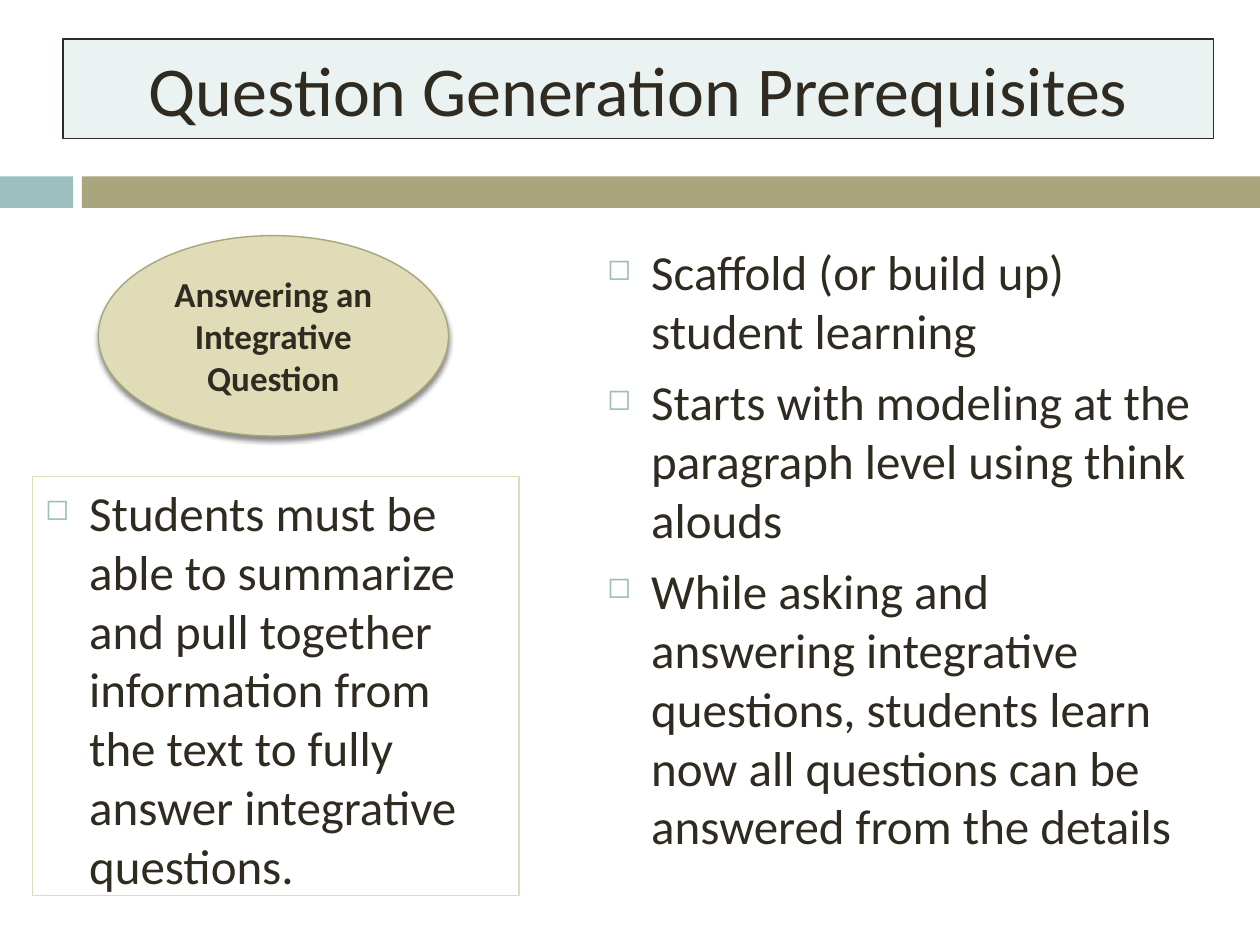
from lxml import etree
from pptx import Presentation
from pptx.dml.color import RGBColor
from pptx.enum.shapes import MSO_SHAPE
from pptx.enum.text import MSO_ANCHOR, MSO_AUTO_SIZE, PP_ALIGN
from pptx.oxml.ns import qn
from pptx.util import Inches, Pt

RECTANGLE, OVAL = MSO_SHAPE.RECTANGLE, MSO_SHAPE.OVAL
MIDDLE, CENTER = MSO_ANCHOR.MIDDLE, PP_ALIGN.CENTER
FIXED_SIZE = MSO_AUTO_SIZE.NONE

INK = RGBColor(0x2F, 0x2B, 0x20)
TEAL = RGBColor(0x9C, 0xBE, 0xBD)
PALE_TEAL = RGBColor(0xEB, 0xF2, 0xF2)
OLIVE = RGBColor(0xA9, 0xA5, 0x7C)
SAND = RGBColor(0xDF, 0xDC, 0xB7)
BLACK = RGBColor(0, 0, 0)

SUMMARY_POINTS = [
    "Students must be able to summarize and pull together information "
    "from the text to fully answer integrative questions.",
]
SCAFFOLD_POINTS = [
    "Scaffold (or build up) student learning",
    "Starts with modeling at the paragraph level using think alouds",
    "While asking and answering integrative questions, students learn now "
    "all questions can be answered from the details",
]


class SlideBuilder:
    font = "Calibri"

    def __init__(self, slide):
        self.slide = slide

    def place(self, shape, box):
        shape.left, shape.top, shape.width, shape.height = map(Inches, box)

    def outline(self, shape, color, width=0.75):
        shape.line.color.rgb = color
        shape.line.width = Pt(width)

    def format_runs(self, paragraph, size, bold=False):
        for run in paragraph.runs:
            run.font.name = self.font
            run.font.size = Pt(size)
            run.font.bold = bold
            run.font.color.rgb = INK

    def centered_text(self, shape, text, size, bold=False):
        frame = shape.text_frame
        frame.text = text
        frame.word_wrap = True
        frame.auto_size = FIXED_SIZE
        frame.vertical_anchor = MIDDLE
        frame.paragraphs[0].alignment = CENTER
        self.format_runs(frame.paragraphs[0], size, bold)

    def title(self, text, box):
        title = self.slide.shapes.title
        self.place(title, box)
        title.fill.solid()
        title.fill.fore_color.rgb = PALE_TEAL
        self.outline(title, INK)
        self.centered_text(title, text, 40)

    def shape(self, kind, box, color):
        shape = self.slide.shapes.add_shape(kind, *map(Inches, box))
        shape.shadow.inherit = False
        shape.fill.solid()
        shape.fill.fore_color.rgb = color
        shape.line.fill.background()
        return shape

    def oval(self, text, box):
        oval = self.shape(OVAL, box, SAND)
        self.outline(oval, OLIVE, 0.79)
        self.centered_text(oval, text, 20, bold=True)
        self.drop_shadow(oval)

    def drop_shadow(self, shape):
        effects = shape.element.spPr.find(qn("a:effectLst"))
        shadow = etree.SubElement(
            effects, qn("a:outerShdw"), blurRad=str(Pt(3)), dist=str(Pt(2.4)),
            dir="5400000", algn="ctr", rotWithShape="0")
        color = etree.SubElement(shadow, qn("a:srgbClr"), val=str(BLACK))
        etree.SubElement(color, qn("a:alpha"), val="45000")

    def bullet_list(self, points, box, border=None):
        text_box = self.slide.shapes.add_textbox(*map(Inches, box))
        if border is not None:
            self.outline(text_box, border)
        frame = text_box.text_frame
        frame.text = "\n".join(points)
        frame.word_wrap = True
        frame.auto_size = FIXED_SIZE
        for paragraph in frame.paragraphs:
            paragraph.space_before = Pt(7)
            self.format_runs(paragraph, 28)
            self.bullet(paragraph)

    def bullet(self, paragraph):
        properties = paragraph._p.get_or_add_pPr()
        properties.set("marL", str(Inches(0.35)))
        properties.set("indent", str(-Inches(0.35)))
        color = etree.SubElement(properties, qn("a:buClr"))
        etree.SubElement(color, qn("a:srgbClr"), val=str(TEAL))
        etree.SubElement(properties, qn("a:buSzPct"), val="60000")
        etree.SubElement(properties, qn("a:buChar"), char="◻")


def main():
    presentation = Presentation()
    presentation.slide_width = Inches(10)
    presentation.slide_height = Inches(7.5)
    title_only = presentation.slide_layouts[5]
    builder = SlideBuilder(presentation.slides.add_slide(title_only))

    builder.shape(RECTANGLE, (0, 1.4, 0.58, 0.25), TEAL)
    builder.shape(RECTANGLE, (0.65, 1.4, 9.35, 0.25), OLIVE)
    builder.title("Question Generation Prerequisites", (0.5, 0.31, 9.13, 0.79))
    builder.bullet_list(SUMMARY_POINTS, (0.26, 3.78, 3.86, 3.33), border=SAND)
    builder.bullet_list(SCAFFOLD_POINTS, (4.72, 1.87, 4.92, 5.31))
    builder.oval("Answering an Integrative Question", (0.78, 1.87, 2.78, 1.59))

    presentation.save("out.pptx")


if __name__ == "__main__":
    main()
